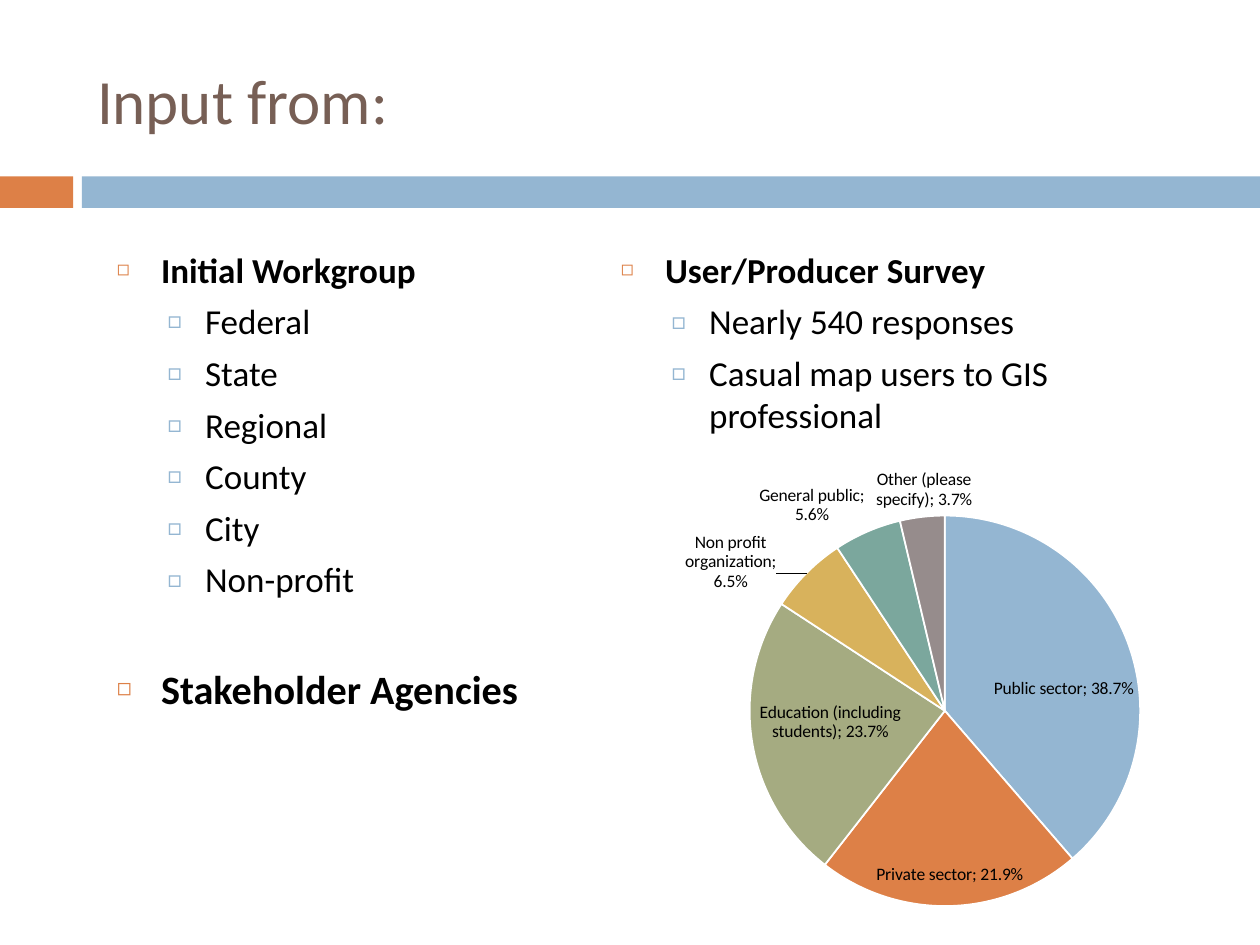
from dataclasses import dataclass

from lxml import etree
from pptx import Presentation
from pptx.chart.data import CategoryChartData
from pptx.dml.color import RGBColor
from pptx.enum.chart import XL_CHART_TYPE, XL_LABEL_POSITION
from pptx.enum.shapes import MSO_SHAPE
from pptx.enum.text import MSO_ANCHOR, PP_ALIGN
from pptx.oxml import parse_xml
from pptx.oxml.ns import nsdecls, qn
from pptx.util import Inches, Pt

PIE = XL_CHART_TYPE.PIE
INSIDE, OUTSIDE = XL_LABEL_POSITION.INSIDE_END, XL_LABEL_POSITION.OUTSIDE_END
RECTANGLE = MSO_SHAPE.RECTANGLE
MIDDLE, TOP = MSO_ANCHOR.MIDDLE, MSO_ANCHOR.TOP
LEFT = PP_ALIGN.LEFT


@dataclass(frozen=True)
class Theme:
    font: str = "Calibri"
    text: str = "000000"
    title: str = "775F55"
    white: str = "FFFFFF"
    orange: str = "DD8047"
    blue: str = "94B6D2"
    slices: tuple = ("94B6D2", "DD8047", "A5AB81", "D8B25C", "7BA79D", "968C8C")
    title_size: int = 36
    body_size: int = 20
    closing_size: int = 23
    label_size: int = 10


THEME = Theme()
WIDTH, HEIGHT = 10, 7.5
TITLE = "Input from:"
TITLE_AREA = (0.67, 0.25, 8.92, 1.08)
BAND_TOP, BAND_HEIGHT, BAND_SPLIT, BAND_GAP = 1.4, 0.25, 0.58, 0.07
COLUMN_TOP = 1.92

LEVELS = [
    dict(bullet="◻", bullet_color=THEME.orange, bullet_share=60,
         margin=0.35, hanging=0.35, before=7, bold=True),
    dict(bullet="□", bullet_color=THEME.blue, bullet_share=70,
         margin=0.7, hanging=0.3, before=5.5, bold=False),
]
COLUMNS = [
    dict(left=4.83, width=4.25, height=2.51, items=[
        (0, "User/Producer Survey", {}),
        (1, "Nearly 540 responses", {}),
        (1, "Casual map users to GIS professional", {}),
    ]),
    dict(left=0.83, width=3.67, height=5, items=[
        (0, "Initial Workgroup", {}),
        (1, "Federal", {}),
        (1, "State", {}),
        (1, "Regional", {}),
        (1, "County", {}),
        (1, "City", {}),
        (1, "Non-profit", {}),
        (0, "Stakeholder Agencies", dict(size=THEME.closing_size, before=37)),
    ]),
]

CHART_AREA = (4.5, 3.58, 5, 3.75)
PLOT_SHARES = dict(x=0.29, y=0.13, w=0.62, h=0.84)
PERCENT = "0.0%"
RESPONSES = [
    ("Public sector", 0.387, INSIDE, dict(x=0.02, y=0.07)),
    ("Private sector", 0.219, INSIDE, dict(x=0, y=-0.03)),
    ("Education (including students)", 0.237, INSIDE, None),
    ("Non profit organization", 0.065, OUTSIDE, dict(x=-0.04, y=0.05)),
    ("General public", 0.056, OUTSIDE, None),
    ("Other (please specify)", 0.037, OUTSIDE, dict(x=0.08, y=0)),
]


def rgb(color):
    return RGBColor.from_string(color)


def style_font(font, size, color=THEME.text, bold=False):
    font.name, font.size, font.bold = THEME.font, Pt(size), bold
    font.color.rgb = rgb(color)


def add_text(para, text, size=THEME.body_size, color=THEME.text, bold=False,
             before=0, margin=0, hanging=0, bullet=None, bullet_color=None,
             bullet_share=100):
    para.alignment = LEFT
    para.space_before = Pt(before)
    span = para.add_run()
    span.text = text
    style_font(span.font, size, color, bold)
    if bullet:
        props = para._p.get_or_add_pPr()
        props.set("marL", str(Inches(margin)))
        props.set("indent", str(-Inches(hanging)))
        tint = etree.SubElement(props, qn("a:buClr"))
        etree.SubElement(tint, qn("a:srgbClr"), val=bullet_color)
        etree.SubElement(props, qn("a:buSzPct"), val=str(bullet_share * 1000))
        etree.SubElement(props, qn("a:buFont"), typeface=THEME.font)
        etree.SubElement(props, qn("a:buChar"), char=bullet)


def add_band(page, left, right, color):
    band = page.shapes.add_shape(RECTANGLE, Inches(left), Inches(BAND_TOP),
                                 Inches(right - left), Inches(BAND_HEIGHT))
    band.shadow.inherit = False
    band.fill.solid()
    band.fill.fore_color.rgb = rgb(color)
    band.line.fill.background()


def add_title(page):
    box = page.shapes.title
    box.left, box.top, box.width, box.height = map(Inches, TITLE_AREA)
    box.text_frame.word_wrap = True
    box.text_frame.vertical_anchor = MIDDLE
    add_text(box.text_frame.paragraphs[0], TITLE, size=THEME.title_size, color=THEME.title)


def add_column(page, left, width, height, items):
    box = page.shapes.add_textbox(Inches(left), Inches(COLUMN_TOP),
                                  Inches(width), Inches(height))
    frame = box.text_frame
    frame.word_wrap = True
    frame.vertical_anchor = TOP
    for index, (level, text, changes) in enumerate(items):
        para = frame.add_paragraph() if index else frame.paragraphs[0]
        para.level = level
        add_text(para, text, **{**LEVELS[level], **changes})


def manual_layout(shares, inner=False):
    target = '<c:layoutTarget val="inner"/><c:xMode val="edge"/><c:yMode val="edge"/>'
    values = "".join(f'<c:{key} val="{value}"/>' for key, value in shares.items())
    return parse_xml(f'<c:layout {nsdecls("c")}><c:manualLayout>'
                     f'{target if inner else ""}{values}</c:manualLayout></c:layout>')


def add_label(point, position, offset):
    label = point.data_label
    style_font(label.font, THEME.label_size)
    label.position = position
    node = label._dLbl
    node.find(qn("c:showCatName")).set("val", "1")
    etree.SubElement(node, qn("c:separator")).text = "; "
    number = etree.Element(qn("c:numFmt"), formatCode=PERCENT, sourceLinked="0")
    node.insert(1, number)
    if offset:
        node.insert(1, manual_layout(offset))


def add_pie(page):
    data = CategoryChartData(number_format=PERCENT)
    data.categories = [name for name, *_ in RESPONSES]
    data.add_series("Series 1", [value for _, value, *_ in RESPONSES])
    chart = page.shapes.add_chart(PIE, *map(Inches, CHART_AREA), data).chart
    chart.has_legend = chart.has_title = False
    style_font(chart.font, THEME.label_size)
    plot = chart.plots[0]
    plot.vary_by_categories = True
    area = plot._element.getparent()
    for old in area.findall(qn("c:layout")):
        area.remove(old)
    area.insert(0, manual_layout(PLOT_SHARES, inner=True))
    series = plot.series[0]
    labels = series.data_labels
    labels.show_value = labels.show_category_name = True
    labels.number_format, labels.number_format_is_linked = PERCENT, False
    for index, (_, _, position, offset) in enumerate(RESPONSES):
        point = series.points[index]
        point.format.fill.solid()
        point.format.fill.fore_color.rgb = rgb(THEME.slices[index])
        point.format.line.color.rgb = rgb(THEME.white)
        point.format.line.width = Pt(1)
        add_label(point, position, offset)


def main():
    deck = Presentation()
    deck.slide_width, deck.slide_height = Inches(WIDTH), Inches(HEIGHT)
    page = deck.slides.add_slide(deck.slide_layouts.get_by_name("Title Only"))
    add_band(page, 0, BAND_SPLIT, THEME.orange)
    add_band(page, BAND_SPLIT + BAND_GAP, WIDTH, THEME.blue)
    add_title(page)
    for column in COLUMNS:
        add_column(page, **column)
    add_pie(page)
    deck.save("out.pptx")


if __name__ == "__main__":
    main()
